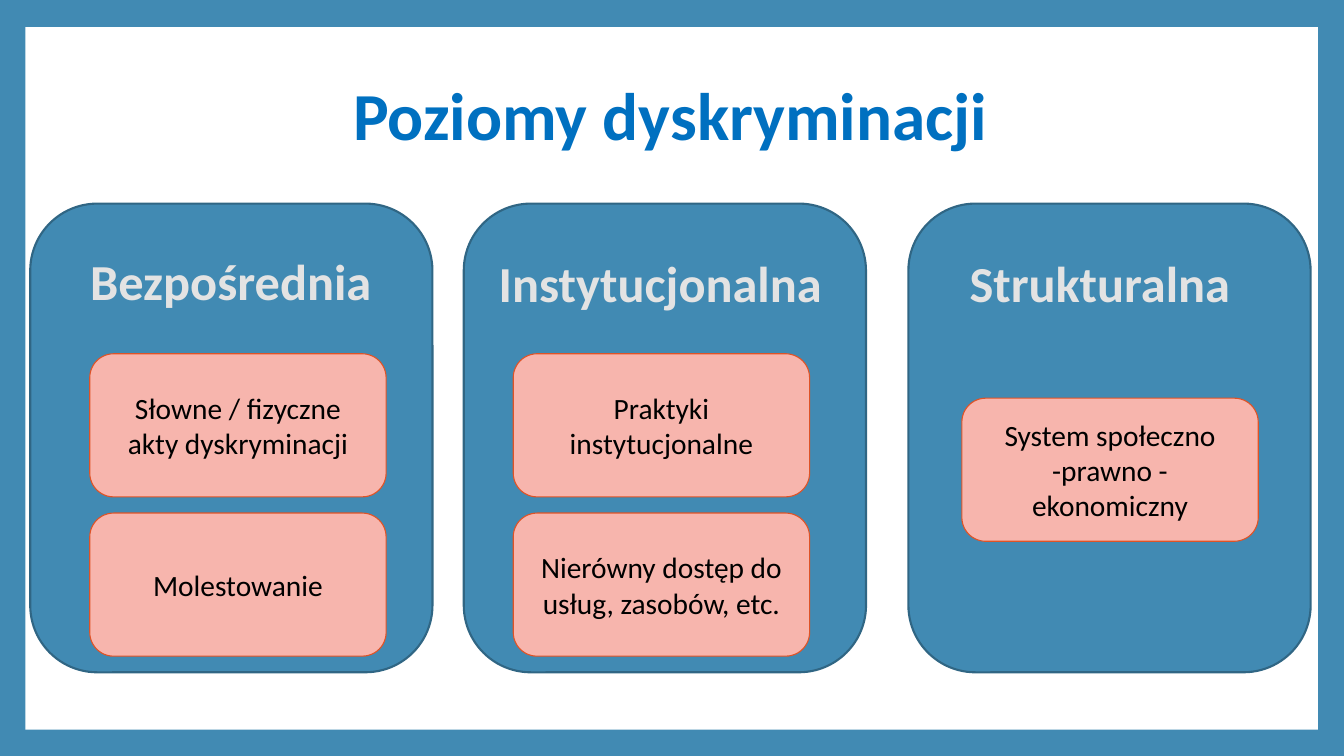
from dataclasses import dataclass

from pptx import Presentation
from pptx.dml.color import RGBColor
from pptx.enum.shapes import MSO_SHAPE
from pptx.enum.text import MSO_ANCHOR, MSO_AUTO_SIZE, PP_ALIGN
from pptx.util import Inches, Pt

RECTANGLE = MSO_SHAPE.RECTANGLE
ROUNDED = MSO_SHAPE.ROUNDED_RECTANGLE
MIDDLE, TOP = MSO_ANCHOR.MIDDLE, MSO_ANCHOR.TOP
CENTER = PP_ALIGN.CENTER
FIXED = MSO_AUTO_SIZE.NONE


@dataclass(frozen=True)
class Theme:
    """Colours, font, type sizes and line widths of the slide."""
    font: str = "Calibri"
    blue: str = "418AB3"
    dark_blue: str = "306684"
    white: str = "FFFFFF"
    title: str = "0070C0"
    heading: str = "E3E3E3"
    card: str = "F7B5AD"
    card_edge: str = "DF5327"
    black: str = "000000"
    title_size: int = 48
    heading_size: int = 36
    card_size: int = 21
    panel_line: float = 1.5
    card_line: float = 0.79


@dataclass(frozen=True)
class Box:
    """A rectangle in inches."""
    left: float
    top: float
    width: float
    height: float

    def inner(self, x, y, w, h):
        """Return the inner box given in percent of this one."""
        return Box(self.left + self.width * x / 100, self.top + self.height * y / 100,
                   self.width * w / 100, self.height * h / 100)

    def emu(self):
        """Return left, top, width and height as lengths."""
        return [Inches(side) for side in (self.left, self.top, self.width, self.height)]


@dataclass(frozen=True)
class Level:
    """One level of discrimination, with places in percent of its panel."""
    heading: str
    cards: tuple
    panel_x: float
    heading_x: float
    heading_y: float
    heading_w: float
    card_x: float
    card_y: float


THEME = Theme()
SLIDE = Box(0, 0, 13.33, 7.5)
CARD_W, CARD_H, CARD_STEP = 73.68, 30.54, 33.98
LEVELS = (
    Level("Bezpośrednia", ("Słowne / fizyczne akty dyskryminacji", "Molestowanie"),
          2.25, 7.77, 8.82, 84.21, 14.79, 32.04),
    Level("Instytucjonalna",
          ("Praktyki instytucjonalne", "Nierówny dostęp do usług, zasobów, etc."),
          34.51, 4.51, 9.25, 88.72, 12.28, 32.04),
    Level("Strukturalna", ("System społeczno -prawno - ekonomiczny",),
          67.59, 5.51, 9.25, 84.21, 13.28, 41.51),
)


def write(holder, text, size, color, bold=False, anchor=MIDDLE, spacing=1.0):
    """Write centred, wrapped text into a shape."""
    frame = holder.text_frame
    frame.word_wrap = True
    frame.auto_size = FIXED
    frame.vertical_anchor = anchor
    paragraph = frame.paragraphs[0]
    paragraph.alignment = CENTER
    paragraph.line_spacing = spacing
    run = paragraph.add_run()
    run.text = text
    run.font.name = THEME.font
    run.font.size = Pt(size)
    run.font.bold = bold
    run.font.color.rgb = RGBColor.from_string(color)


def add_block(slide, kind, box, fill, edge=None, line=0):
    """Add a filled preset shape with an optional outline."""
    block = slide.shapes.add_shape(kind, *box.emu())
    block.shadow.inherit = False
    block.fill.solid()
    block.fill.fore_color.rgb = RGBColor.from_string(fill)
    if edge:
        block.line.color.rgb = RGBColor.from_string(edge)
        block.line.width = Pt(line)
    else:
        block.line.fill.background()
    return block


def add_frame(slide, box):
    """Set the blue border around a white sheet."""
    slide.background.fill.solid()
    slide.background.fill.fore_color.rgb = RGBColor.from_string(THEME.blue)
    sheet = add_block(slide, RECTANGLE, box.inner(1.88, 3.6, 96.17, 92.93), THEME.white)
    slide.shapes.title.element.addprevious(sheet.element)


def add_title(slide, box, text):
    """Place and format the title placeholder."""
    title = slide.shapes.title
    title.left, title.top, title.width, title.height = box.emu()
    write(title, text, THEME.title_size, THEME.title, bold=True, spacing=0.9)


def add_level(slide, box, level):
    """Draw one panel with its cards and heading."""
    add_block(slide, ROUNDED, box, THEME.blue, THEME.dark_blue, THEME.panel_line)
    for row, text in enumerate(level.cards):
        place = box.inner(level.card_x, level.card_y + row * CARD_STEP, CARD_W, CARD_H)
        card = add_block(slide, ROUNDED, place, THEME.card, THEME.card_edge, THEME.card_line)
        write(card, text, THEME.card_size, THEME.black)
    place = box.inner(level.heading_x, level.heading_y, level.heading_w, 14.19)
    heading = slide.shapes.add_textbox(*place.emu())
    write(heading, level.heading, THEME.heading_size, THEME.heading, bold=True, anchor=TOP)


def main():
    """Build and save the slide."""
    deck = Presentation()
    deck.slide_width, deck.slide_height = Inches(SLIDE.width), Inches(SLIDE.height)
    slide = deck.slides.add_slide(deck.slide_layouts[5])
    add_frame(slide, SLIDE)
    add_title(slide, SLIDE.inner(9.38, 8.93, 81.02, 13.6), "Poziomy dyskryminacji")
    for level in LEVELS:
        add_level(slide, SLIDE.inner(level.panel_x, 26.93, 29.93, 62), level)
    deck.save("out.pptx")


if __name__ == "__main__":
    main()
